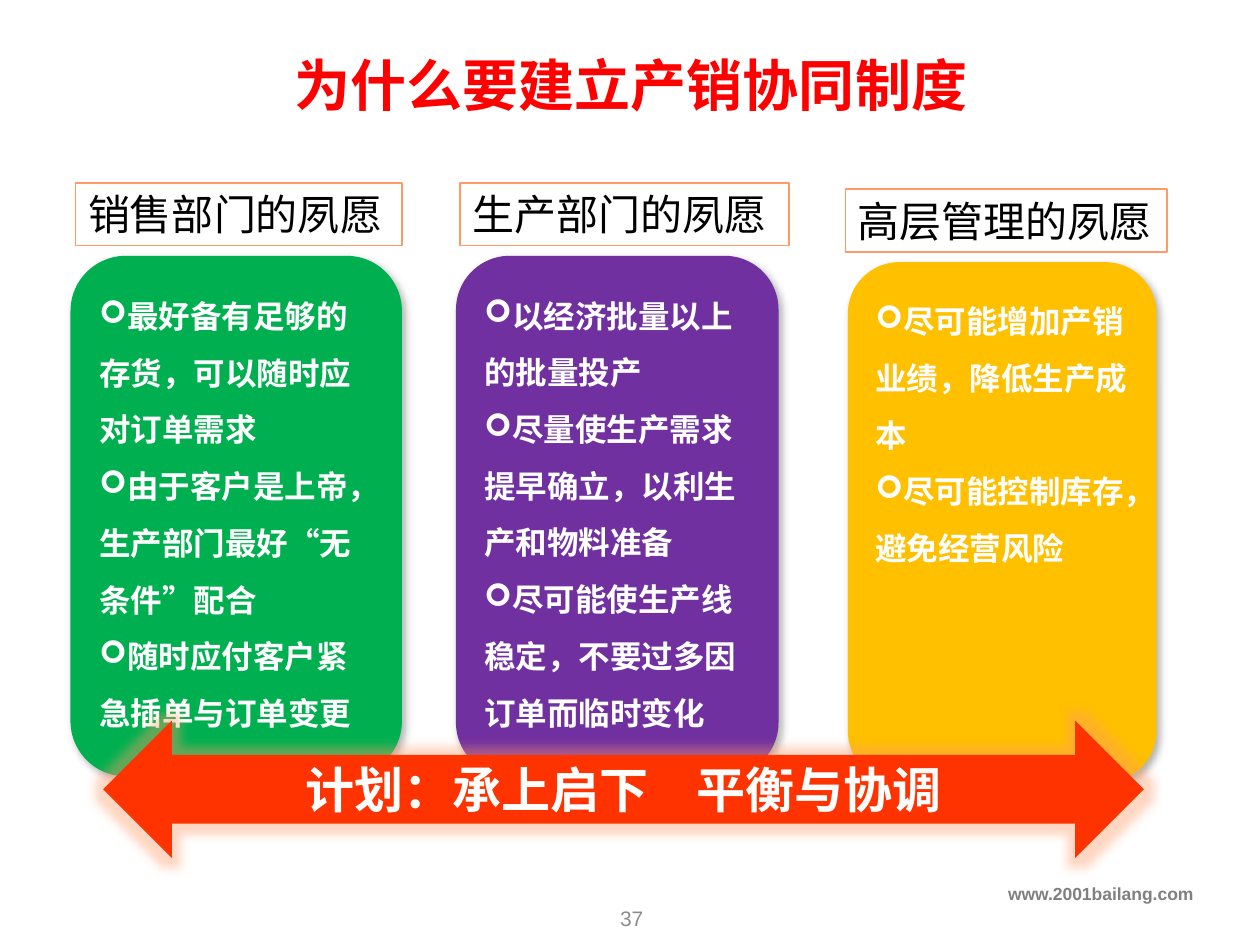
from lxml.etree import SubElement
from pptx import Presentation
from pptx.dml.color import RGBColor
from pptx.enum.shapes import MSO_SHAPE
from pptx.enum.text import MSO_ANCHOR, PP_ALIGN
from pptx.oxml.ns import qn
from pptx.util import Pt

WHITE = RGBColor(0xFF, 0xFF, 0xFF)
BLACK = RGBColor(0x00, 0x00, 0x00)
RED = RGBColor(0xFF, 0x00, 0x00)
GREEN = RGBColor(0x00, 0xB0, 0x50)
PURPLE = RGBColor(0x70, 0x30, 0xA0)
AMBER = RGBColor(0xFF, 0xC0, 0x00)
FLAME = RGBColor(0xFF, 0x33, 0x00)
PEACH = RGBColor(0xFF, 0x99, 0x66)
GREY = RGBColor(0x80, 0x80, 0x80)
PALE_GREY = RGBColor(0x8C, 0x8C, 0x8C)
CHINESE_FONT = "Noto Sans CJK SC"

COLUMNS = [
    ("销售部门的夙愿", (43.2, 104.4, 186.5), (40.3, 146.2, 189.4), GREEN, [
        "最好备有足够的存货，可以随时应对订单需求",
        "由于客户是上帝，生产部门最好“无条件”配合",
        "随时应付客户紧急插单与订单变更",
    ]),
    ("生产部门的夙愿", (262.8, 104.4, 188), (260.6, 146.2, 184.3), PURPLE, [
        "以经济批量以上的批量投产",
        "尽量使生产需求提早确立，以利生产和物料准备",
        "尽可能使生产线稳定，不要过多因订单而临时变化",
    ]),
    ("高层管理的夙愿", (483.1, 108, 183.6), (484.5, 149.8, 176.4), AMBER, [
        "尽可能增加产销业绩，降低生产成本",
        "尽可能控制库存，避免经营风险",
    ]),
]


def write(box, lines, size, color, bold=False, font=CHINESE_FONT, align=PP_ALIGN.LEFT,
          anchor=MSO_ANCHOR.MIDDLE, bullet=None, spacing=None):
    """Fill a box with paragraphs that share one format."""
    frame = box.text_frame
    frame.word_wrap = True
    frame.vertical_anchor = anchor
    for index, line in enumerate(lines):
        paragraph = frame.paragraphs[0] if index == 0 else frame.add_paragraph()
        paragraph.alignment = align
        if spacing:
            paragraph.line_spacing = spacing
        if bullet:
            properties = paragraph._p.get_or_add_pPr()
            SubElement(properties, qn("a:buFont"), typeface="Wingdings")
            SubElement(properties, qn("a:buChar"), char=bullet)
        span = paragraph.add_run()
        span.text = line
        span.font.size = Pt(size)
        span.font.bold = bold
        span.font.name = font
        span.font.color.rgb = color
        SubElement(span._r.get_or_add_rPr(), qn("a:ea"), typeface=font)


def add_text(page, bounds, text, **style):
    """Add a text box holding one line."""
    box = page.shapes.add_textbox(*map(Pt, bounds))
    write(box, [text], **style)


def add_box(page, kind, bounds, fill, outline=None):
    """Add a flat filled shape, with a thin outline if given."""
    box = page.shapes.add_shape(kind, *map(Pt, bounds))
    box.shadow.inherit = False
    box.fill.solid()
    box.fill.fore_color.rgb = fill
    if outline is None:
        box.line.fill.background()
    else:
        box.line.color.rgb = outline
        box.line.width = Pt(1)
    return box


def add_effect(box, kind, color, opacity, **lengths):
    """Give a shape a shadow or a glow."""
    effects = box._element.spPr.find(qn("a:effectLst"))
    attributes = {name: str(int(value)) for name, value in lengths.items()}
    effect = SubElement(effects, qn(kind), attributes)
    shade = SubElement(effect, qn("a:srgbClr"), val=str(color))
    SubElement(shade, qn("a:alpha"), val=str(opacity * 1000))


def add_header(page, place, text):
    """Add the outlined heading of a column."""
    box = add_box(page, MSO_SHAPE.RECTANGLE, (*place, 36), WHITE, PEACH)
    write(box, [text], size=24, color=BLACK)


def add_card(page, place, fill, wishes):
    """Add a rounded card with a bulleted list of wishes."""
    box = add_box(page, MSO_SHAPE.ROUNDED_RECTANGLE, (*place, 297.4), fill)
    add_effect(box, "a:outerShdw", BLACK, 30, blurRad=Pt(4.5), dist=Pt(2.6), dir=53 * 60000)
    write(box, wishes, size=18, color=WHITE, bold=True, anchor=MSO_ANCHOR.TOP,
          bullet="➢", spacing=Pt(32.4))


def add_plan_arrow(page):
    """Add the glowing double arrow across the columns."""
    arrow = add_box(page, MSO_SHAPE.LEFT_RIGHT_ARROW, (59, 411.8, 594.7, 78.5), FLAME)
    add_effect(arrow, "a:glow", PEACH, 40, rad=Pt(11))
    write(arrow, ["计划：承上启下　平衡与协调"], size=28, color=WHITE, bold=True,
          align=PP_ALIGN.CENTER)


def main():
    """Build the slide and save it."""
    deck = Presentation()
    deck.slide_width, deck.slide_height = Pt(720), Pt(540)
    page = deck.slides.add_slide(deck.slide_layouts[6])
    add_text(page, (0, 501.1, 689, 25.2), "www.2001bailang.com", size=10, color=GREY,
             bold=True, font="Arial", align=PP_ALIGN.RIGHT, anchor=MSO_ANCHOR.TOP)
    add_text(page, (107.3, 25.2, 506.9, 46.1), "为什么要建立产销协同制度", size=32,
             color=RED, bold=True, align=PP_ALIGN.CENTER)
    for heading, header_place, card_place, fill, wishes in COLUMNS:
        add_header(page, header_place, heading)
        add_card(page, card_place, fill, wishes)
    add_plan_arrow(page)
    add_text(page, (280, 510.5, 162, 28.8), "37", size=12, color=PALE_GREY,
             font="Arial", align=PP_ALIGN.CENTER)
    deck.save("out.pptx")


if __name__ == "__main__":
    main()
